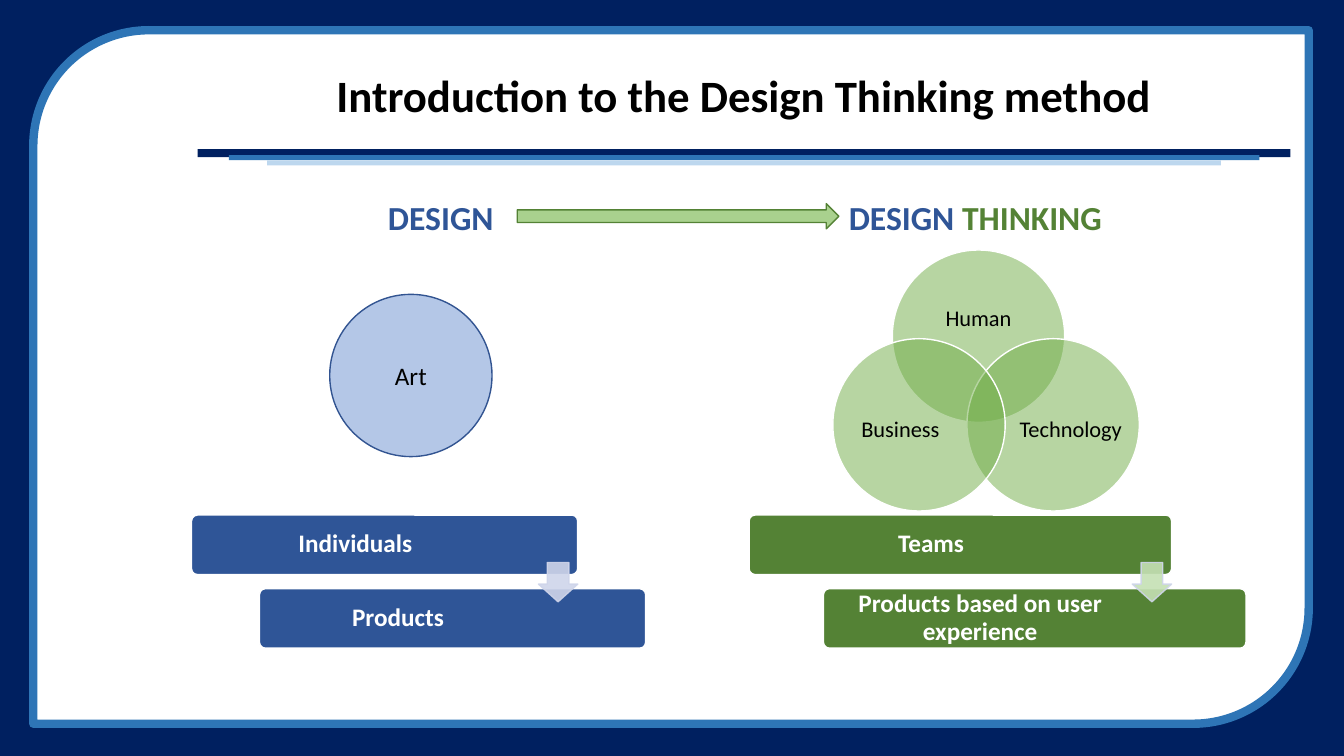
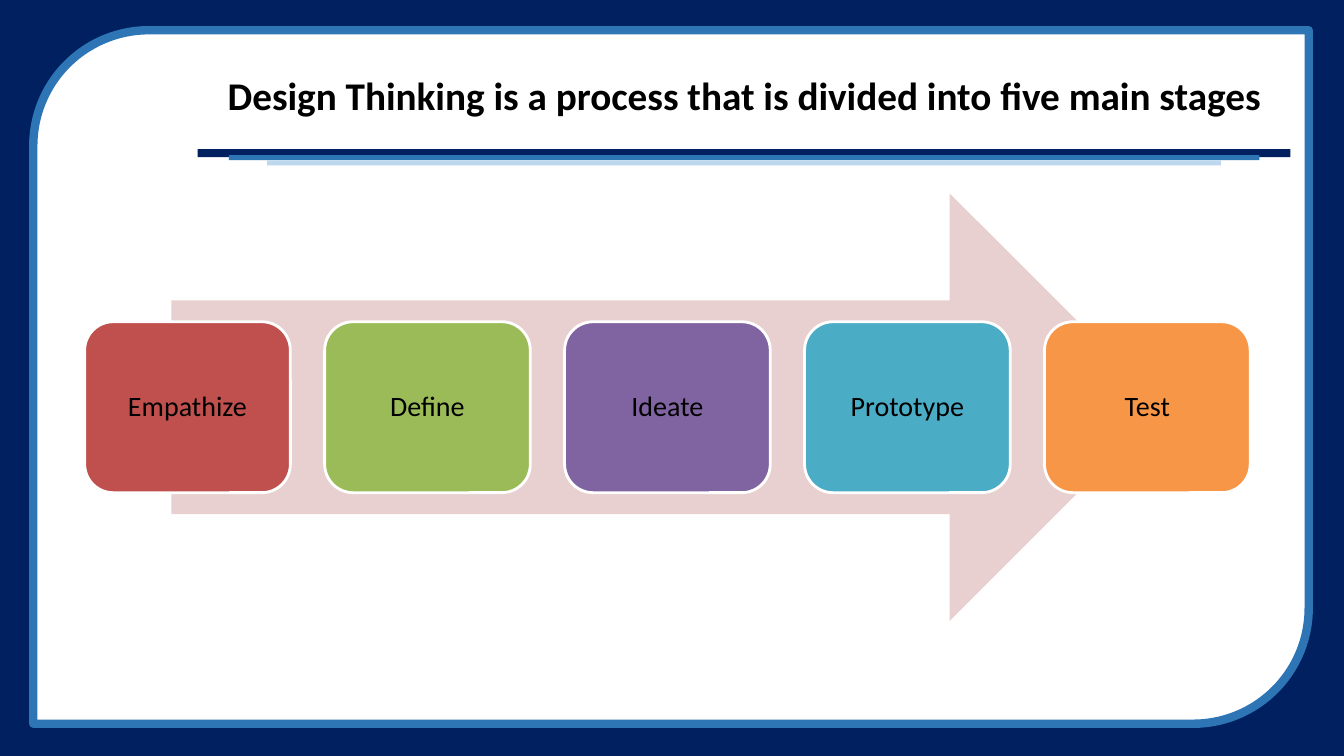
"""Build two slides that introduce the Design Thinking method."""
from dataclasses import dataclass

from lxml.etree import SubElement
from pptx import Presentation
from pptx.dml.color import RGBColor as RGB
from pptx.enum.shapes import MSO_SHAPE as Kind
from pptx.enum.text import MSO_ANCHOR as Anchor, PP_ALIGN as Align
from pptx.oxml.ns import qn
from pptx.util import Inches, Pt


@dataclass(frozen=True)
class Theme:
    """Hold the colours, type sizes and font of the deck."""
    font: str = "Calibri"
    white: str = "FFFFFF"
    black: str = "000000"
    navy: str = "002060"
    blue: str = "2E75B6"
    pale: str = "BDD7EE"
    ink: str = "2F5597"
    sky: str = "B4C7E7"
    rim: str = "325491"
    green: str = "548235"
    leaf: str = "A9D18E"
    venn: str = "70AD47"
    mint: str = "C5E0B4"
    mist: str = "CFD5EA"
    rose: str = "E8D0D0"
    stages: tuple = ("C0504D", "9BBB59", "8064A2", "4BACC6", "F79646")
    title: int = 32
    long: int = 28
    head: int = 24
    stage: int = 20
    body: int = 18
    label: int = 16


T = Theme()


def write(shape, text, size=T.body, color=T.black, bold=False, align=Align.CENTER,
          pad=(0, 0, 0, 0), space=0.9, wrap=True):
    """Fill a shape with one paragraph, given as text or as (text, colour) runs."""
    frame = shape.text_frame
    frame.word_wrap = wrap
    frame.vertical_anchor = Anchor.MIDDLE
    left, top, right, low = map(Inches, pad)
    frame.margin_left, frame.margin_top = left, top
    frame.margin_right, frame.margin_bottom = right, low
    para = frame.paragraphs[0]
    para.alignment, para.line_spacing = align, space
    for part, tint in [(text, color)] if isinstance(text, str) else text:
        run = para.add_run()
        run.text = part
        font = run.font
        font.name, font.size, font.bold = T.font, Pt(size), bold
        font.color.rgb = RGB.from_string(tint)


def label(slide, box, text, **style):
    """Add a text box and write in it."""
    write(slide.shapes.add_textbox(*map(Inches, box)), text, **style)


def fade(shape, tag, alpha):
    """Set the opacity in percent of a fill or line colour."""
    color = shape.element.spPr.find(tag).find(".//" + qn("a:srgbClr"))
    SubElement(color, qn("a:alpha"), val=str(alpha * 1000))


def draw(slide, kind, box, fill, line=None, width=1, adj=()):
    """Add a flat preset shape."""
    shape = slide.shapes.add_shape(kind, *map(Inches, box))
    shape.shadow.inherit = False
    shape.fill.solid()
    shape.fill.fore_color.rgb = RGB.from_string(fill)
    if line:
        shape.line.color.rgb = RGB.from_string(line)
        shape.line.width = Pt(width)
    else:
        shape.line.fill.background()
    for i, value in enumerate(adj):
        shape.adjustments[i] = value
    return shape


def start(deck, title, size):
    """Add a slide with the shared frame, title and rules."""
    slide = deck.slides.add_slide(deck.slide_layouts[6])
    draw(slide, Kind.RECTANGLE, (0, 0, 13.33, 7.5), T.navy)
    panel = (0.33, 0.3, 12.65, 6.88)
    draw(slide, Kind.ROUND_2_DIAG_RECTANGLE, panel, T.white, T.blue, 6)
    x, y, w = 1.96, 0.49, 10.84
    rules = ((0, 0.99, 0.08, T.navy), (0.31, 1.05, 0.05, T.blue),
             (0.69, 1.1, 0.05, T.pale))
    for inset, drop, h, color in rules:
        draw(slide, Kind.RECTANGLE, (x + inset, y + drop, w - 2 * inset, h), color)
    label(slide, (x, y, w, 0.97), title, size=size, bold=True)
    return slide


def heads(slide, x, y):
    """Place the two headings and the arrow between them."""
    style = dict(size=T.head, bold=True, align=Align.LEFT, space=1,
                 pad=(0.1, 0.05, 0.1, 0.05), wrap=False)
    label(slide, (x, y, 1.26, 0.5), "DESIGN", color=T.ink, **style)
    runs = [("DESIGN ", T.ink), ("THINKING", T.green)]
    label(slide, (x + 4.57, y, 2.73, 0.5), runs, **style)
    draw(slide, Kind.RIGHT_ARROW, (x + 1.38, y + 0.12, 3.19, 0.25), T.leaf, T.green)


def venn(slide, x, y):
    """Place three see-through circles with their labels."""
    size = 1.71
    parts = (("Human", 0.59, 0, (0.23, 0.3, 1.25, 0.77)),
             ("Technology", 1.33, 0.88, (0.52, 0.44, 1.02, 0.94)),
             ("Business", 0, 0.88, (0.16, 0.44, 1.02, 0.94)))
    for text, dx, dy, (tx, ty, w, h) in parts:
        left, top = x + dx, y + dy
        disc = draw(slide, Kind.OVAL, (left, top, size, size), T.venn, T.white)
        fade(disc, qn("a:solidFill"), 50)
        label(slide, (left + tx, top + ty, w, h), text, size=T.label, wrap=False)


def steps(slide, x, y, w, texts, fill, tip):
    """Place two stepped bars joined by a down arrow."""
    for i, text in enumerate(texts):
        box = (x + i * w * 0.176, y + i * 0.73, w, 0.59)
        bar = draw(slide, Kind.ROUNDED_RECTANGLE, box, fill, T.white, adj=[0.1])
        write(bar, text, color=T.white, bold=True, pad=(0.07, 0, 0.65 + i * 0.5, 0))
    size = 0.39
    box = (x + w - size, y + 0.47, size, size)
    arrow = draw(slide, Kind.DOWN_ARROW, box, tip, T.mist, adj=[0.55, 0.45])
    for tag in ("a:solidFill", "a:ln"):
        fade(arrow, qn(tag), 90)


def intro(deck):
    """Build the slide that sets design beside design thinking."""
    slide = start(deck, "Introduction to the Design Thinking method", T.title)
    venn(slide, 8.26, 2.48)
    steps(slide, 1.9, 5.11, 3.83, ("Individuals", "Products"), T.ink, T.mist)
    teams = ("Teams", "Products based on user experience")
    steps(slide, 7.43, 5.11, 4.19, teams, T.green, T.mint)
    art = draw(slide, Kind.OVAL, (3.27, 2.92, 1.61, 1.61), T.sky, T.rim)
    write(art, "Art", space=1)
    heads(slide, 3.75, 1.9)


def flow(slide, x, y, w, h):
    """Place the wide arrow and the row of stages on it."""
    edge = 0.86
    arrow = (x + edge, y, w - 2 * edge, h)
    draw(slide, Kind.RIGHT_ARROW, arrow, T.rose)
    names = ("Empathize", "Define", "Ideate", "Prototype", "Test")
    wide, tall = 2.04, h * 0.4
    pitch = (w - wide) / (len(names) - 1)
    for i, (name, color) in enumerate(zip(names, T.stages)):
        box = (x + i * pitch, y + (h - tall) / 2, wide, tall)
        card = draw(slide, Kind.ROUNDED_RECTANGLE, box, color, T.white, 2)
        write(card, name, size=T.stage)


def process(deck):
    """Build the slide of the five stages."""
    title = "Design Thinking is a process that is divided into five main stages"
    flow(start(deck, title, T.long), 0.84, 1.92, 11.56, 4.24)


def main():
    """Build and save the deck."""
    deck = Presentation()
    deck.slide_width, deck.slide_height = Inches(13.33), Inches(7.5)
    intro(deck)
    process(deck)
    deck.save("out.pptx")


if __name__ == "__main__":
    main()
